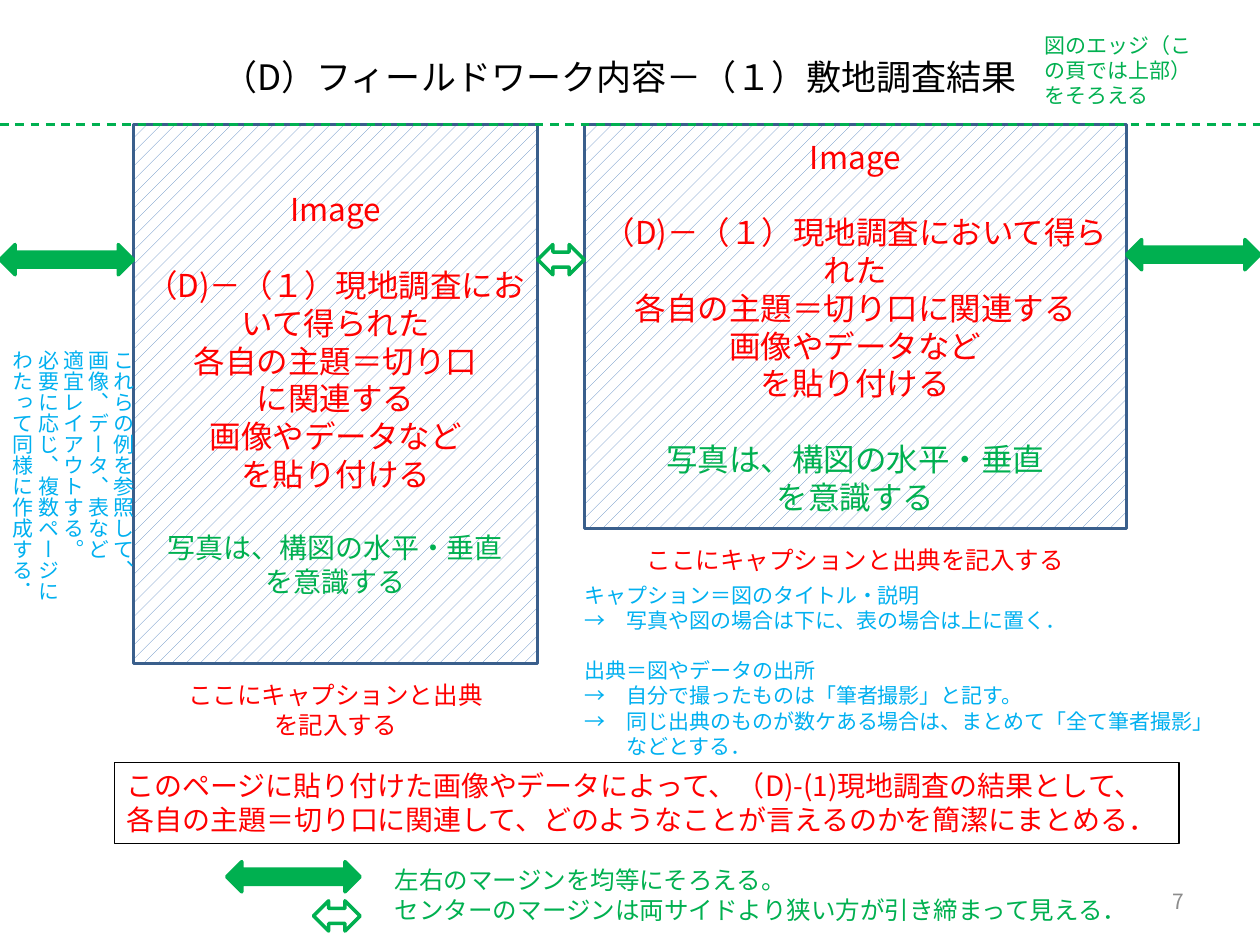
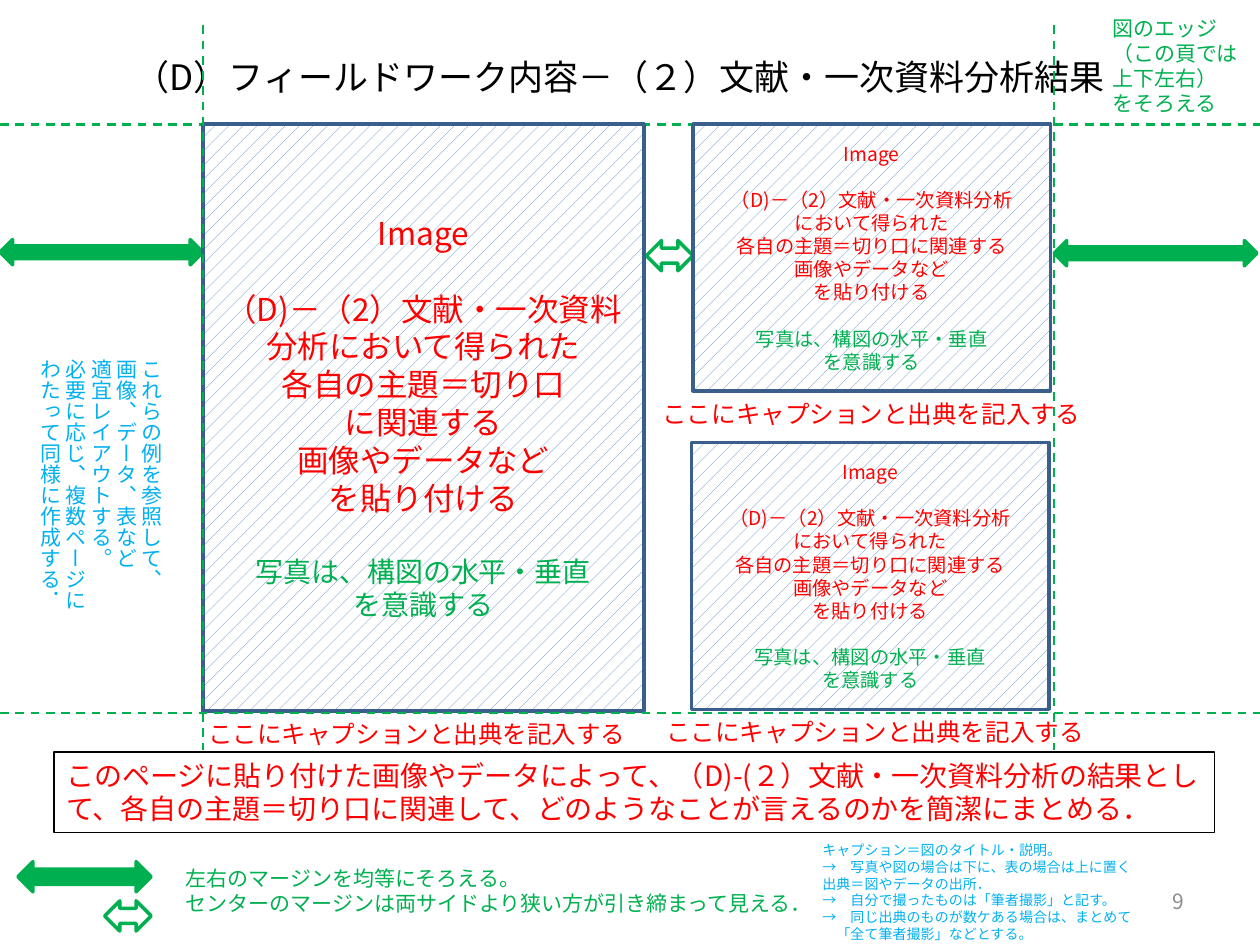
from lxml import etree
from pptx import Presentation
from pptx.dml.color import RGBColor
from pptx.enum.dml import MSO_LINE, MSO_PATTERN
from pptx.enum.lang import MSO_LANGUAGE_ID
from pptx.enum.shapes import MSO_CONNECTOR, MSO_SHAPE
from pptx.enum.text import MSO_ANCHOR, MSO_AUTO_SIZE, PP_ALIGN
from pptx.oxml.ns import qn
from pptx.util import Cm, Pt

DASH, PATTERN = MSO_LINE.DASH, MSO_PATTERN.PERCENT_10
JAPANESE = MSO_LANGUAGE_ID.JAPANESE
STRAIGHT = MSO_CONNECTOR.STRAIGHT
RECTANGLE, DOUBLE_ARROW = MSO_SHAPE.RECTANGLE, MSO_SHAPE.LEFT_RIGHT_ARROW
MIDDLE, TOP = MSO_ANCHOR.MIDDLE, MSO_ANCHOR.TOP
FIXED, GROW = MSO_AUTO_SIZE.NONE, MSO_AUTO_SIZE.SHAPE_TO_FIT_TEXT
LEFT, CENTER, RIGHT = PP_ALIGN.LEFT, PP_ALIGN.CENTER, PP_ALIGN.RIGHT

FONT = "Noto Sans CJK JP"
BLACK, WHITE, GRAY = "000000", "FFFFFF", "8C8C8C"
RED, GREEN, SKY = "FF0000", "00B050", "00B0F0"
HATCH, FRAME = "4F81BD", "3A5F8C"

WIDTH, HEIGHT = 25.4, 19.05
TITLE_ONLY = 5
LINE_HEIGHT = 1.2
IMAGE_TOP = 2.5
ARROW_HEIGHT = 0.61
WIDE_ARROW, NARROW_ARROW = 2.69, 0.94

PHOTO_ADVICE = "写真は、構図の水平・垂直\nを意識する"
CAPTION = "ここにキャプションと出典を記入する"
MARGIN_ADVICE = ("左右のマージンを均等にそろえる。\n"
                 "センターのマージンは両サイドより狭い方が引き締まって見える．")
LAYOUT_ADVICE = ("これらの例を参照して、\n画像、データ、表など\n適宜レイアウトする。\n"
                 "必要に応じ、複数ページに\nわたって同様に作成する．")
SUMMARY = ("このページに貼り付けた画像やデータによって、（D)-{}の結果として、"
           "各自の主題＝切り口に関連して、どのようなことが言えるのかを簡潔にまとめる．")


def color(value):
    return RGBColor.from_string(value)


def write(frame, text, size=12, ink=BLACK, align=LEFT, gap=0):
    """Add one paragraph a line; an empty line opens a gap, leading wide spaces an indent."""
    for line in text.split("\n"):
        if not line:
            gap = size
            continue
        para = frame.paragraphs[0]
        if para.runs:
            para = frame.add_paragraph()
        para.alignment = align
        if gap:
            para.space_before = Pt(gap * LINE_HEIGHT)
        gap = 0
        words = line.lstrip("　")
        indent = len(line) - len(words)
        if indent:
            properties = para._p.get_or_add_pPr()
            properties.set("marL", str(Pt(indent * size)))
            properties.set("indent", "0")
        span = para.add_run()
        span.text = words
        span.font.size = Pt(size)
        span.font.color.rgb = color(ink)
        span.font.name = FONT
        span.font.language_id = JAPANESE
        etree.SubElement(span._r.get_or_add_rPr(), qn("a:ea"), typeface=FONT)


class Page:
    """One slide of the deck, drawn in centimetres."""

    def __init__(self, deck, title, number):
        self.slide = deck.slides.add_slide(deck.slide_layouts[TITLE_ONLY])
        self.shapes = self.slide.shapes
        box = self.shapes.title
        box.left, box.top, box.width, box.height = Cm(1.7), Cm(0.74), Cm(21.59), Cm(1.6)
        box.text_frame.auto_size = FIXED
        box.text_frame.vertical_anchor = MIDDLE
        write(box.text_frame, title, size=20, align=CENTER)
        self.text(number, 18.21, 17.65, 5.92, 1.02, ink=GRAY, align=RIGHT,
                  anchor=MIDDLE, autosize=FIXED)

    def text(self, text, left, top, width, height, wrap=True, anchor=TOP,
             autosize=GROW, **style):
        box = self.shapes.add_textbox(Cm(left), Cm(top), Cm(width), Cm(height))
        frame = box.text_frame
        frame.word_wrap = wrap
        frame.auto_size = autosize
        frame.vertical_anchor = anchor
        write(frame, text, **style)
        return box

    def shape(self, kind, left, top, width, height, line):
        shape = self.shapes.add_shape(kind, Cm(left), Cm(top), Cm(width), Cm(height))
        shape.shadow.inherit = False
        shape.line.color.rgb = color(line)
        shape.line.width = Pt(2)
        return shape

    def image(self, text, left, top, width, height, size=18, advice_size=18):
        """Hatched stand-in for an image, with its instructions."""
        box = self.shape(RECTANGLE, left, top, width, height, FRAME)
        box.fill.patterned()
        box.fill.pattern = PATTERN
        box.fill.fore_color.rgb = color(HATCH)
        box.fill.back_color.rgb = color(WHITE)
        frame = box.text_frame
        frame.word_wrap = True
        frame.vertical_anchor = MIDDLE
        write(frame, text, size=size, ink=RED, align=CENTER)
        write(frame, PHOTO_ADVICE, size=advice_size, ink=GREEN, align=CENTER, gap=size)

    def caption(self, text, left, top, width, height=0.86):
        self.text(text, left, top, width, height, size=14, ink=RED, align=CENTER)

    def summary(self, subject, left, top, width):
        box = self.text(SUMMARY.format(subject), left, top, width, 1.63, size=16, ink=RED)
        box.line.color.rgb = color(BLACK)
        box.line.width = Pt(0.75)

    def side_arrow(self, left, top, width=WIDE_ARROW, height=ARROW_HEIGHT):
        arrow = self.shape(DOUBLE_ARROW, left, top, width, height, GREEN)
        arrow.fill.solid()
        arrow.fill.fore_color.rgb = color(GREEN)

    def center_arrow(self, left, top):
        arrow = self.shape(DOUBLE_ARROW, left, top, NARROW_ARROW, ARROW_HEIGHT, GREEN)
        arrow.fill.background()

    def margin_legend(self, left, width, height, size):
        self.text(MARGIN_ADVICE, left + 3.14, 17.32, width, height, wrap=False,
                  size=size, ink=GREEN)
        self.side_arrow(left, 17.37)
        self.center_arrow(left + WIDE_ARROW - NARROW_ARROW, 18.16)

    def guide(self, x1, y1, x2, y2):
        line = self.shapes.add_connector(STRAIGHT, Cm(x1), Cm(y1), Cm(x2), Cm(y2))
        line.line.color.rgb = color(GREEN)
        line.line.width = Pt(1.25)
        line.line.dash_style = DASH
        etree.SubElement(line._element.spPr, qn("a:effectLst"))

    def horizontal_guide(self, y):
        self.guide(0, y, WIDTH, y)

    def vertical_guide(self, x):
        self.guide(x, 0.51, x, 15.11)

    def layout_advice(self, left, top):
        box = self.text(LAYOUT_ADVICE, left, top, 3.07, 5.38, wrap=False, ink=SKY)
        box.text_frame._txBody.bodyPr.set("vert", "eaVert")


def add_survey_page(deck):
    page = Page(deck, "（D）フィールドワーク内容－（１）敷地調査結果", "7")
    intro = "Image\n\n（D)－（１）現地調査において得られた\n"
    ending = "画像やデータなど\nを貼り付ける"
    margin, top = WIDE_ARROW, IMAGE_TOP + 0.01
    tall = (margin, 8.15, 10.87)
    wide_left = margin + 8.15 + NARROW_ARROW
    wide = (wide_left, WIDTH - margin - wide_left, 8.15)
    images = [
        (tall, "各自の主題＝切り口\nに関連する\n", 16, "ここにキャプションと出典\nを記入する", 1.45),
        (wide, "各自の主題＝切り口に関連する\n", 18, CAPTION, 0.86),
    ]
    for (left, width, height), theme, advice_size, caption, caption_height in images:
        page.image(intro + theme + ending, left, top, width, height,
                   advice_size=advice_size)
        page.caption(caption, left, top + height + 0.21, width, caption_height)
    page.summary("(1)現地調査", 2.31, 15.37, 21.46)
    page.side_arrow(0, 4.93)
    page.side_arrow(WIDTH - margin, 4.83)
    page.center_arrow(wide_left - NARROW_ARROW, 4.93)
    page.margin_legend(4.57, 15.47, 1.45, size=14)
    page.text("キャプション＝図のタイトル・説明\n"
              "→　写真や図の場合は下に、表の場合は上に置く．\n\n"
              "出典＝図やデータの出所\n"
              "→　自分で撮ったものは「筆者撮影」と記す。\n"
              "→　同じ出典のものが数ケある場合は、まとめて「全て筆者撮影」\n"
              "　　などとする．",
              11.53, 11.61, 13.34, 3.84, wrap=False, ink=SKY)
    page.horizontal_guide(top)
    page.text("図のエッジ（この頁では上部）をそろえる", 20.8, 0.53, 3.78, 1.8, ink=GREEN)
    page.layout_advice(-0.2, 6.81)


def add_literature_page(deck):
    page = Page(deck, "（D）フィールドワーク内容－（２）文献・一次資料分析結果", "9")
    page.summary("(２）文献・一次資料分析", 1.09, 15.16, 23.39)
    margin, right = 4.09, 21.25
    page.side_arrow(0, 4.83, margin, 0.51)
    page.center_arrow(13.03, 4.85)
    page.margin_legend(0.36, 13.34, 1.27, size=12)
    page.text("キャプション＝図のタイトル・説明。\n"
              "→　写真や図の場合は下に、表の場合は上に置く\n"
              "出典＝図やデータの出所．\n"
              "→　自分で撮ったものは「筆者撮影」と記す。\n"
              "→　同じ出典のものが数ケある場合は、まとめて\n"
              "　「全て筆者撮影」などとする。",
              16.33, 16.84, 7.8, 2.31, size=8, ink=SKY)
    page.horizontal_guide(IMAGE_TOP + 0.01)
    page.text("図のエッジ\n（この頁では\n上下左右）\nをそろえる", 22.17, 0.18, 3.07, 2.31,
              wrap=False, ink=GREEN)
    page.image("Image\n\n（D)－（2）文献・一次資料分析において得られた\n各自の主題＝切り口\n"
               "に関連する\n画像やデータなど\nを貼り付ける",
               margin, IMAGE_TOP, 8.89, 11.84, advice_size=16)
    for left, top in [(13.97, IMAGE_TOP), (13.94, 8.92)]:
        page.image("Image\n\n（D)－（2）文献・一次資料分析\nにおいて得られた\n"
                   "各自の主題＝切り口に関連する\n画像やデータなど\nを貼り付ける",
                   left, top, 7.21, 5.38, size=11, advice_size=11)
    for left, top, width in [(3.94, 14.38, 8.94), (12.09, 7.92, 10.95),
                             (12.17, 14.33, 10.95)]:
        page.caption(CAPTION, left, top, width)
    page.side_arrow(right, 4.85, margin, 0.51)
    page.horizontal_guide(14.38)
    for x in (margin, right):
        page.vertical_guide(x)
    page.layout_advice(0.36, 6.98)


def main():
    deck = Presentation()
    deck.slide_width, deck.slide_height = Cm(WIDTH), Cm(HEIGHT)
    add_survey_page(deck)
    add_literature_page(deck)
    deck.save("out.pptx")


if __name__ == "__main__":
    main()
